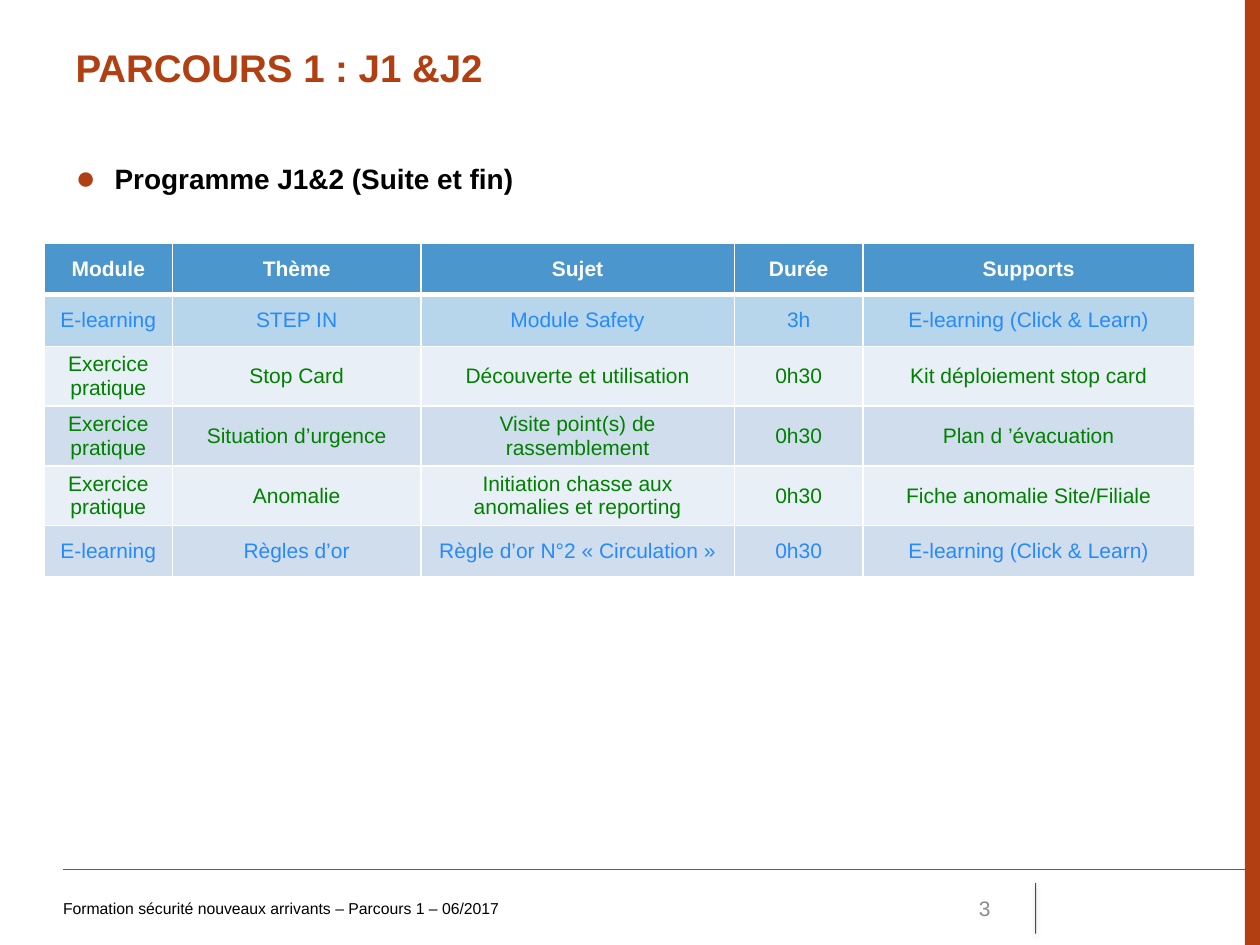
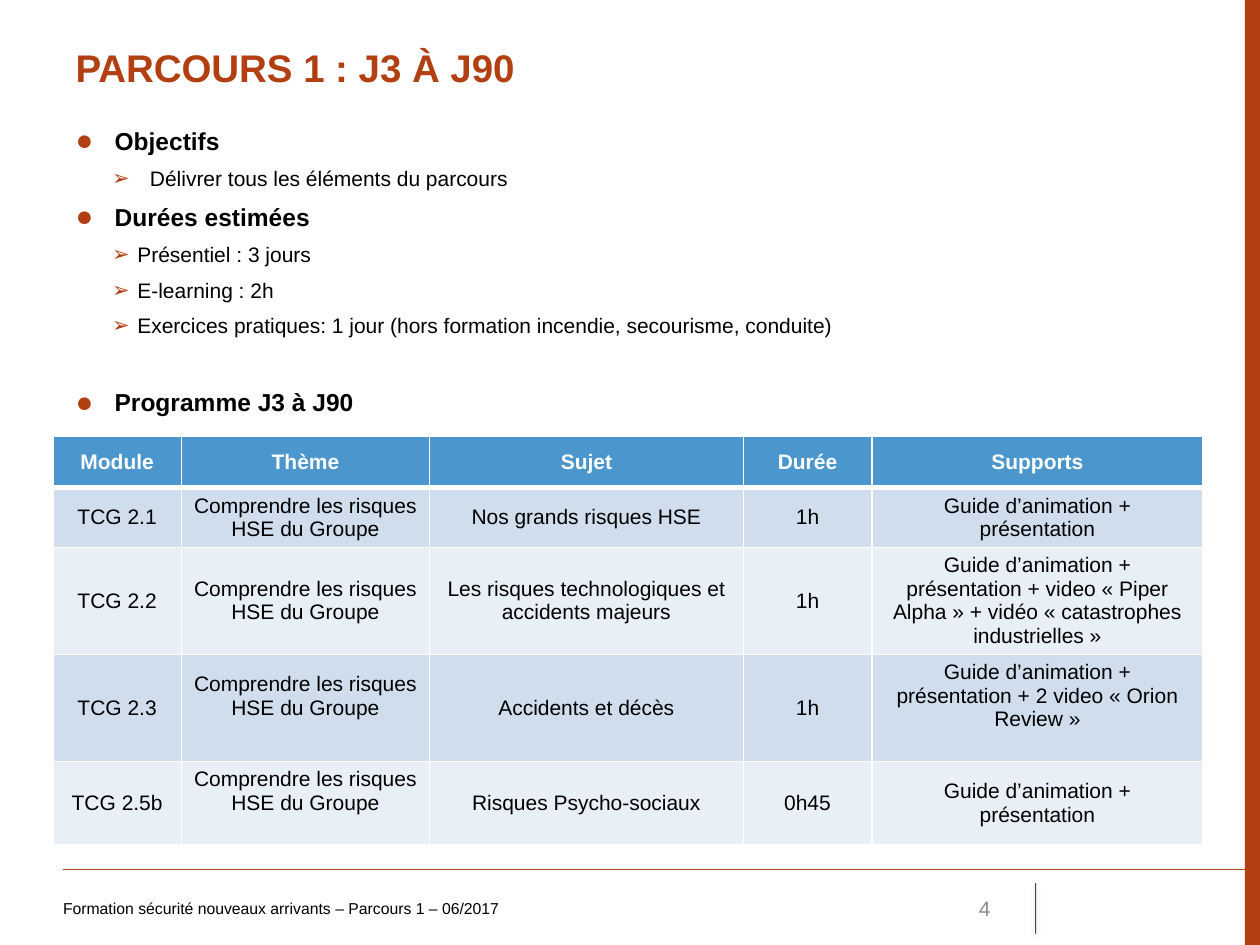
from lxml import etree
from pptx import Presentation
from pptx.dml.color import RGBColor
from pptx.enum.shapes import MSO_CONNECTOR, MSO_SHAPE
from pptx.enum.text import MSO_ANCHOR, MSO_AUTO_SIZE, PP_ALIGN
from pptx.oxml.ns import qn
from pptx.util import Inches, Pt

LEFT, CENTER, RIGHT = PP_ALIGN.LEFT, PP_ALIGN.CENTER, PP_ALIGN.RIGHT
TOP, MIDDLE = MSO_ANCHOR.TOP, MSO_ANCHOR.MIDDLE
STRAIGHT, RECT = MSO_CONNECTOR.STRAIGHT, MSO_SHAPE.RECTANGLE
NO_AUTOFIT = MSO_AUTO_SIZE.NONE

# Shared look
FONT = "Arial"
RUST, BLACK, WHITE, GREY = "B23F12", "000000", "FFFFFF", "8C8C8C"
BLUE, GREEN = "268AFF", "008000"
HEADER_FILL, HIGHLIGHT_FILL = "4A96CD", "B7D5EB"
BANDS = ("D0DDED", "E9EFF6")
FOOTER = "Formation sécurité nouveaux arrivants – Parcours 1 – 06/2017"
FIRST_NUMBER = 3

# Bullet kinds: char, char size %, left indent, hanging, level, bold
BULLETS = {
    "heading": ("●", 120, 0.31, 0.31, 0, True),
    "goal": ("➢", 100, 0.59, 0.3, 1, False),
    "duration": ("➢", 100, 0.49, 0.2, 1, False),
}

# Table content
COLUMNS = [("Module", 1.02), ("Thème", 1.97), ("Sujet", 2.49),
           ("Durée", 1.02), ("Supports", 2.63)]
HEADER_HEIGHT = 0.41
MODULE_COLORS = {"E-learning": BLUE, "Exercice pratique": GREEN}
RISKS = "Comprendre les risques HSE du Groupe"
GUIDE = "Guide d’animation + présentation"
ELEARNING = "E-learning (Click & Learn)"

# Bullets: kind, text, size, space before. Rows: height, cells.
# "raised" lists the (row, column) cells whose text sits above the middle.
SLIDES = [
    {
        "title": "PARCOURS 1 : J1 &J2",
        "body": (1.23, 0.47),
        "bullets": [("heading", "Programme J1&2 (Suite et fin)", 16, 0)],
        "table": (0.35, 1.93),
        "rows": [
            (0.41, ("E-learning", "STEP IN", "Module Safety", "3h", ELEARNING)),
            (0.47, ("Exercice pratique", "Stop Card", "Découverte et utilisation",
                    "0h30", "Kit déploiement stop card")),
            (0.47, ("Exercice pratique", "Situation d’urgence",
                    "Visite point(s) de rassemblement", "0h30", "Plan d ’évacuation")),
            (0.47, ("Exercice pratique", "Anomalie",
                    "Initiation chasse aux anomalies et reporting", "0h30",
                    "Fiche anomalie Site/Filiale")),
            (0.41, ("E-learning", "Règles d’or", "Règle d’or N°2 « Circulation »",
                    "0h30", ELEARNING)),
        ],
        "highlight": 1,
        "raised": (),
    },
    {
        "title": "PARCOURS 1 : J3 À J90",
        "body": (0.95, 2.4),
        "bullets": [
            ("heading", "Objectifs", 14, 0),
            ("goal", "Délivrer tous les éléments du parcours", 12, 3),
            ("heading", "Durées estimées", 14, 3),
            ("duration", "Présentiel : 3 jours", 12, 3),
            ("duration", "E-learning : 2h", 12, 3),
            ("duration", "Exercices pratiques: 1 jour "
                         "(hors formation incendie, secourisme, conduite)", 12, 3),
            ("heading", "Programme J3 à J90", 14, 25),
        ],
        "table": (0.42, 3.46),
        "rows": [
            (0.47, ("TCG 2.1", RISKS, "Nos grands risques HSE", "1h", GUIDE)),
            (0.85, ("TCG 2.2", RISKS, "Les risques technologiques et accidents majeurs",
                    "1h", GUIDE + " + video « Piper Alpha » + vidéo "
                                  "« catastrophes industrielles »")),
            (0.85, ("TCG 2.3", RISKS, "Accidents et décès", "1h",
                    GUIDE + " + 2 video « Orion Review »")),
            (0.66, ("TCG 2.5b", RISKS, "Risques Psycho-sociaux", "0h45", GUIDE)),
        ],
        "highlight": None,
        "raised": ((3, 1), (3, 4), (4, 1)),
    },
]


def rgb(hex_color):
    return RGBColor.from_string(hex_color)


def sub(parent, tag, **attrs):
    el = etree.SubElement(parent, qn(tag))
    for name, value in attrs.items():
        el.set(name, str(value))
    return el


def add_run(p, text, size, color, bold=False):
    r = p.add_run()
    r.text = text
    r.font.name, r.font.size, r.font.bold = FONT, Pt(size), bold
    r.font.color.rgb = rgb(color)


def place(shape, left, top, width, height):
    shape.left, shape.top = Inches(left), Inches(top)
    shape.width, shape.height = Inches(width), Inches(height)


def setup_frame(tf, anchor):
    tf.word_wrap = True
    tf.auto_size = NO_AUTOFIT
    tf.vertical_anchor = anchor


def add_line(s, x1, y1, x2, y2, color, width):
    line = s.shapes.add_connector(STRAIGHT, *map(Inches, (x1, y1, x2, y2)))
    line.line.color.rgb = rgb(color)
    line.line.width = Pt(width)
    return line, sub(line._element.spPr, "a:effectLst")


def add_text_box(s, left, width):
    tf = s.shapes.add_textbox(*map(Inches, (left, 7.01, width, 0.4))).text_frame
    setup_frame(tf, MIDDLE)
    return tf


def add_frame(s, number):
    # Right band and footer rules
    band = s.shapes.add_shape(RECT, *map(Inches, (9.88, 0, 0.12, 7.5)))
    band.shadow.inherit = False
    band.fill.solid()
    band.fill.fore_color.rgb = rgb(RUST)
    band.line.fill.background()
    add_line(s, 0.5, 6.9, 10, 6.9, RUST, 0.75)
    divider, effects = add_line(s, 8.22, 7.01, 8.22, 7.41, BLACK, 0.5)
    stroke = divider._element.spPr.find(".//" + qn("a:srgbClr"))
    sub(stroke, "a:alpha", val=70000)
    shadow = sub(effects, "a:outerShdw", blurRad=Pt(3.1), dist=Pt(1.6),
                 dir=5400000, rotWithShape=0)
    sub(sub(shadow, "a:srgbClr", val=BLACK), "a:alpha", val=38000)

    # Footer text and slide number
    tf = add_text_box(s, 0.5, 6.08)
    tf.margin_left = 0
    add_run(tf.paragraphs[0], FOOTER, 9, BLACK)
    p = add_text_box(s, 7.17, 0.79).paragraphs[0]
    p.alignment = RIGHT
    add_run(p, str(number), 12, GREY)


def add_title(s, text):
    title = s.shapes.title
    place(title, 0.5, 0.3, 8.99, 0.69)
    setup_frame(title.text_frame, TOP)
    p = title.text_frame.paragraphs[0]
    p.alignment = LEFT
    add_run(p, text, 22, RUST, True)


def add_bullets(s, top, height, bullets):
    body = s.placeholders[1]
    place(body, 0.5, top, 8.99, height)
    tf = body.text_frame
    setup_frame(tf, TOP)
    for i, (kind, text, size, before) in enumerate(bullets):
        char, percent, indent, hanging, level, bold = BULLETS[kind]
        p = tf.paragraphs[0] if i == 0 else tf.add_paragraph()
        pPr = p._p.get_or_add_pPr()
        pPr.set("marL", str(Inches(indent)))
        pPr.set("indent", str(-Inches(hanging)))
        sub(sub(pPr, "a:buClr"), "a:srgbClr", val=RUST)
        sub(pPr, "a:buSzPct", val=percent * 1000)
        sub(pPr, "a:buFont", typeface=FONT)
        sub(pPr, "a:buChar", char=char)
        p.level = level
        p.space_before, p.space_after = Pt(before), Pt(3)
        add_run(p, text, size, BLACK, bold)


def add_borders(cell, widths):
    tcPr = cell._tc.get_or_add_tcPr()
    for i, (side, width) in enumerate(widths.items()):
        ln = sub(tcPr, "a:ln" + side, w=Pt(width))
        sub(sub(ln, "a:solidFill"), "a:srgbClr", val=WHITE)
        tcPr.insert(i, ln)


def add_programme(s, left, top, rows, highlight, raised):
    rows = [(HEADER_HEIGHT, [name for name, _ in COLUMNS])] + rows
    width = sum(w for _, w in COLUMNS)
    height = sum(h for h, _ in rows)
    table = s.shapes.add_table(len(rows), len(COLUMNS),
                               *map(Inches, (left, top, width, height))).table
    table.horz_banding = False
    for column, (_, w) in zip(table.columns, COLUMNS):
        column.width = Inches(w)
    for i, (h, texts) in enumerate(rows):
        table.rows[i].height = Inches(h)
        header = i == 0
        if header:
            fill, color = HEADER_FILL, WHITE
        else:
            fill = HIGHLIGHT_FILL if i == highlight else BANDS[(i - 1) % 2]
            color = MODULE_COLORS.get(texts[0], BLACK)
        for j, text in enumerate(texts):
            cell = table.cell(i, j)
            cell.vertical_anchor = MIDDLE
            if (i, j) in raised:
                cell.margin_bottom = Inches(0.24)
            cell.fill.solid()
            cell.fill.fore_color.rgb = rgb(fill)
            add_borders(cell, {"L": 1, "R": 1, "T": 3 if i == 1 else 1,
                               "B": 3 if header else 1})
            p = cell.text_frame.paragraphs[0]
            p.alignment = CENTER
            add_run(p, text, 12, color, header)


def main():
    prs = Presentation()
    prs.slide_width, prs.slide_height = Inches(10), Inches(7.5)
    for number, content in enumerate(SLIDES, FIRST_NUMBER):
        s = prs.slides.add_slide(prs.slide_layouts[1])
        add_frame(s, number)
        add_title(s, content["title"])
        add_bullets(s, *content["body"], content["bullets"])
        add_programme(s, *content["table"], content["rows"],
                      content["highlight"], content["raised"])
    prs.save("out.pptx")


if __name__ == "__main__":
    main()
